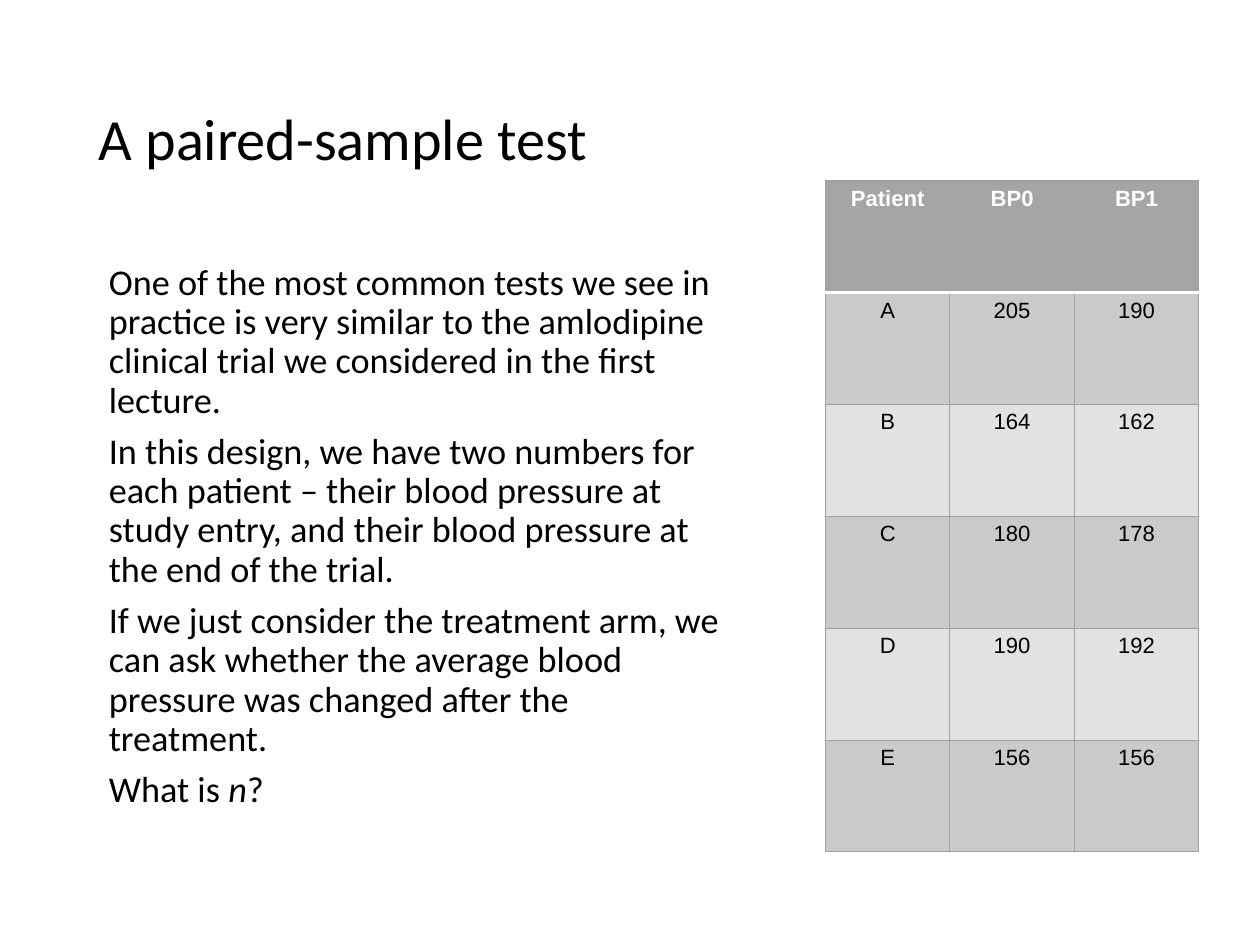
"""Builds a slide that introduces the paired-sample test with a blood pressure table."""
from lxml import etree
from pptx import Presentation
from pptx import util as u
from pptx.dml.color import RGBColor
from pptx.enum import text
from pptx.oxml.ns import qn

TITLE = "A paired-sample test"
BODY = [
    ["One of the most common tests we see in practice is very similar to the "
     "amlodipine clinical trial we considered in the first lecture."],
    ["In this design, we have two numbers for each patient – their blood pressure "
     "at study entry, and their blood pressure at the end of the trial."],
    ["If we just consider the treatment arm, we can ask whether the average blood "
     "pressure was changed after the treatment."],
    ["What is ", "n", "?"],
]
READINGS = [
    ("Patient", "BP0", "BP1"),
    ("A", "205", "190"),
    ("B", "164", "162"),
    ("C", "180", "178"),
    ("D", "190", "192"),
    ("E", "156", "156"),
]
TITLE_BOX = (1.93, 1.12, 24.33, 4.09)
BODY_BOX = (1.93, 5.64, 14.71, 13.44)
TABLE_BOX = (18.49, 4.04, 8.36, 15.04)
INSET = 0.28
BLACK, WHITE = "000000", "FFFFFF"
HEADER, BANDS, GRID = "A5A5A5", ("E2E2E2", "CACACA"), "A1A1A1"


def color(value):
    return RGBColor.from_string(value)


def style_runs(paragraph, font, size, value, bold=False):
    for run in paragraph.runs:
        run.font.name = font
        run.font.size = u.Pt(size)
        run.font.color.rgb = color(value)
        run.font.bold = bold


def add_text(slide, box, paragraphs, size, anchor, space_before=0, indent=0):
    shape = slide.shapes.add_textbox(*map(u.Cm, box))
    frame = shape.text_frame
    frame.word_wrap = True
    frame.vertical_anchor = anchor
    frame.margin_left = frame.margin_right = u.Cm(INSET)
    frame.margin_top = frame.margin_bottom = u.Cm(INSET)
    for index, pieces in enumerate(paragraphs):
        paragraph = frame.add_paragraph() if index else frame.paragraphs[0]
        for piece in pieces:
            run = paragraph.add_run()
            run.text = piece
            run.font.italic = piece == "n"
        paragraph.line_spacing = 0.9
        paragraph.space_before = u.Pt(space_before)
        paragraph._p.get_or_add_pPr().set("marL", str(u.Cm(indent)))
        style_runs(paragraph, "Calibri", size, BLACK)


def add_border(cell, side, value, width):
    line = etree.SubElement(cell._tc.get_or_add_tcPr(), qn("a:ln" + side), w=str(u.Pt(width)))
    fill = etree.SubElement(line, qn("a:solidFill"))
    etree.SubElement(fill, qn("a:srgbClr"), val=value)


def add_readings(slide):
    left, top, width, height = map(u.Cm, TABLE_BOX)
    row_count, column_count = len(READINGS), len(READINGS[0])
    table = slide.shapes.add_table(row_count, column_count, left, top, width, height).table
    for row_index, values in enumerate(READINGS):
        is_header = row_index == 0
        for column_index, value in enumerate(values):
            cell = table.cell(row_index, column_index)
            cell.text_frame.text = value
            paragraph = cell.text_frame.paragraphs[0]
            paragraph.alignment = text.PP_ALIGN.CENTER
            style_runs(paragraph, "Arial", 14, WHITE if is_header else BLACK, is_header)
            for side in "LRTB":
                under_header = (row_index, side) in ((0, "B"), (1, "T"))
                add_border(cell, side, *((WHITE, 2) if under_header else (GRID, 0.75)))
            cell.fill.solid()
            cell.fill.fore_color.rgb = color(HEADER if is_header else BANDS[row_index % 2])


def main():
    presentation = Presentation()
    presentation.slide_width, presentation.slide_height = u.Cm(28.22), u.Cm(21.16)
    slide = presentation.slides.add_slide(presentation.slide_layouts[6])
    add_text(slide, TITLE_BOX, [[TITLE]], 37, text.MSO_ANCHOR.MIDDLE)
    add_text(slide, BODY_BOX, BODY, 23, text.MSO_ANCHOR.TOP, space_before=8, indent=0.23)
    add_readings(slide)
    presentation.save("out.pptx")


if __name__ == "__main__":
    main()
